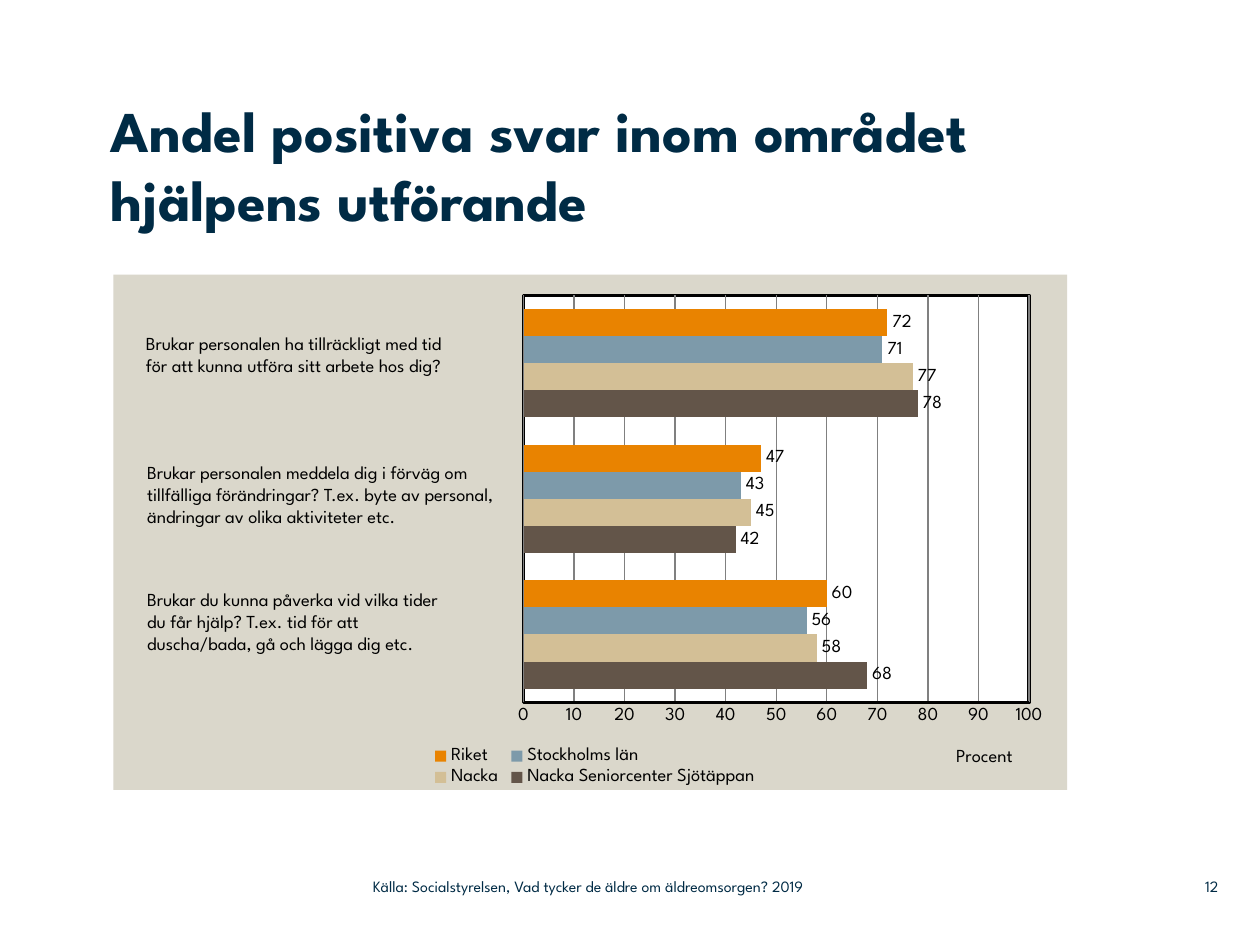
"""Build a slide with a clustered bar chart of positive survey answers."""
import lxml.etree
import pptx
import pptx.chart.data
import pptx.dml.color
import pptx.enum.chart
import pptx.enum.text
import pptx.oxml
import pptx.oxml.ns
import pptx.util
from dataclasses import dataclass

Inches = pptx.util.Inches
Pt = pptx.util.Pt
qn = pptx.oxml.ns.qn


@dataclass(frozen=True)
class Theme:
    """Colours, font and type sizes of the slide."""
    font: str = "League Spartan"
    navy: str = "002B45"
    black: str = "000000"
    white: str = "FFFFFF"
    panel: str = "DAD7CB"
    grid: str = "808080"
    title: float = 33
    body: float = 10.5
    small: float = 9


def rgb(value):
    """Return a colour object for a hex string."""
    return pptx.dml.color.RGBColor.from_string(value)


def apply(target, values):
    """Set each attribute of target from a dict."""
    for key, value in values.items():
        setattr(target, key, value)


def place(parent, after, **box):
    """Give a chart part a manual layout in fractions of the chart."""
    for old in parent.findall(qn("c:layout")):
        parent.remove(old)
    layout = lxml.etree.Element(qn("c:layout"))
    manual = lxml.etree.SubElement(layout, qn("c:manualLayout"))
    values = dict(box, xMode="edge", yMode="edge")
    for tag in ("layoutTarget", "xMode", "yMode", "x", "y", "w", "h"):
        if tag in values:
            lxml.etree.SubElement(manual, qn("c:" + tag), val=str(values[tag]))
    index = parent.index(parent.find(qn(after))) + 1 if after else 0
    parent.insert(index, layout)


def area(fill, line=None, width=2):
    """Return the shape properties of a filled chart area."""
    def solid(color):
        return f'<a:solidFill><a:srgbClr val="{color}"/></a:solidFill>'
    inner = solid(line) if line else "<a:noFill/>"
    return pptx.oxml.parse_xml(
        f'<c:spPr {pptx.oxml.ns.nsdecls("c", "a")}>{solid(fill)}'
        f'<a:ln w="{Pt(width)}">{inner}</a:ln></c:spPr>')


class Builder:
    """Hold the theme and the current slide."""

    def __init__(self, slide, theme):
        """Keep the slide and theme."""
        self.s = slide
        self.theme = theme

    def style(self, font, size, color, bold=False):
        """Apply the theme font to a font object."""
        apply(font, {"name": self.theme.font, "size": Pt(size), "bold": bold})
        font.color.rgb = rgb(color)

    def text(self, box, lines, size, color, bold=False, inset=None, **frame):
        """Add a text box with one paragraph per line."""
        sp = self.s.shapes.add_textbox(*map(Inches, box))
        tf = sp.text_frame
        apply(tf, {"word_wrap": True, **frame})
        if inset is not None:
            sides = ("left", "right", "top", "bottom")
            apply(tf, {f"margin_{side}": Inches(inset) for side in sides})
        for i, line in enumerate(lines):
            p = tf.add_paragraph() if i else tf.paragraphs[0]
            r = p.add_run()
            r.text = line
            self.style(r.font, size, color, bold)
        return tf

    def chart(self, box, categories, series):
        """Add the bar chart with its axes, legend and labels."""
        t = self.theme
        enum = pptx.enum.chart
        data = pptx.chart.data.CategoryChartData()
        data.categories = categories
        for name, values, _ in series:
            data.add_series(name, values)
        chart = self.s.shapes.add_chart(
            enum.XL_CHART_TYPE.BAR_CLUSTERED, *map(Inches, box), data).chart
        apply(chart, {"has_title": False, "has_legend": True})
        self.style(chart.font, t.body, t.black)
        space = chart._chartSpace
        space.find(qn("c:chart")).addnext(area(t.panel))
        plot_area = space.chart.plotArea
        plot_area.append(area(t.white, t.black))
        place(plot_area, None, layoutTarget="inner",
              x=0.43, y=0.04, w=0.53, h=0.79)

        plot = chart.plots[0]
        apply(plot, {"gap_width": 100, "overlap": 0,
                     "vary_by_categories": False, "has_data_labels": True})
        apply(plot.data_labels, {
            "show_value": True,
            "position": enum.XL_LABEL_POSITION.OUTSIDE_END})
        self.style(plot.data_labels.font, t.body, t.black)
        for bar, (_, _, color) in zip(plot.series, series):
            bar.format.fill.solid()
            bar.format.fill.fore_color.rgb = rgb(color)

        chart.category_axis.visible = False
        axis = chart.value_axis
        apply(axis, {
            "minimum_scale": 0, "maximum_scale": 100, "major_unit": 10,
            "has_major_gridlines": True, "has_title": True,
            "major_tick_mark": enum.XL_TICK_MARK.NONE,
            "minor_tick_mark": enum.XL_TICK_MARK.NONE})
        for line, color, width in (
                (axis.format.line, t.black, 2),
                (axis.major_gridlines.format.line, t.grid, 0.75)):
            line.color.rgb = rgb(color)
            line.width = Pt(width)
        self.style(axis.tick_labels.font, t.body, t.black)
        r = axis.axis_title.text_frame.paragraphs[0].add_run()
        r.text = "Procent"
        self.style(r.font, t.body, t.black)
        place(axis.axis_title._element, "c:tx", x=0.88, y=0.91)

        legend = chart.legend
        apply(legend, {"position": enum.XL_LEGEND_POSITION.BOTTOM,
                       "include_in_layout": False})
        self.style(legend.font, t.body, t.black)
        place(legend._element, "c:legendPos", x=0.33, y=0.91, w=0.35, h=0.09)


def main():
    """Build and save the slide."""
    prs = pptx.Presentation()
    apply(prs, {"slide_width": Inches(10), "slide_height": Inches(7.5)})
    t = Theme()
    b = Builder(prs.slides.add_slide(prs.slide_layouts[6]), t)

    b.chart((0.9, 2.18, 7.57, 4.09), ("1", "2", "3"), (
        ("Nacka Seniorcenter Sjötäppan", (68, 42, 78), "635549"),
        ("Nacka", (58, 45, 77), "D3BF96"),
        ("Stockholms län", (56, 43, 71), "7D9AAA"),
        ("Riket", (60, 47, 72), "E98300")))
    b.text((0.88, 0.75, 7.6, 1.42),
           ["Andel positiva svar inom området hjälpens utförande"],
           t.title, t.navy, bold=True, inset=0)

    questions = (
        ((1.06, 2.59, 2.99, 0.45),
         ["Brukar personalen ha tillräckligt med tid",
          "för att kunna utföra sitt arbete hos dig?"]),
        ((1.07, 3.61, 2.97, 0.81),
         ["Brukar personalen meddela dig i förväg om tillfälliga "
          "förändringar? T.ex. byte av personal, ändringar av olika "
          "aktiviteter etc."]),
        ((1.07, 4.62, 2.97, 0.63),
         ["Brukar du kunna påverka vid vilka tider",
          "du får hjälp? T.ex. tid för att",
          "duscha/bada, gå och lägga dig etc."]))
    for box, lines in questions:
        b.text(box, lines, t.body, t.black,
               auto_size=pptx.enum.text.MSO_AUTO_SIZE.SHAPE_TO_FIT_TEXT)

    footer = {"size": t.small, "color": t.navy, "inset": 0,
              "vertical_anchor": pptx.enum.text.MSO_ANCHOR.MIDDLE}
    number = b.text((9.2, 6.89, 0.47, 0.29), ["12"], **footer)
    number.paragraphs[0].alignment = pptx.enum.text.PP_ALIGN.RIGHT
    b.text((2.96, 6.89, 4.43, 0.29),
           ["Källa: Socialstyrelsen, Vad tycker de äldre om "
            "äldreomsorgen? 2019"], **footer)
    prs.save("out.pptx")


if __name__ == "__main__":
    main()
